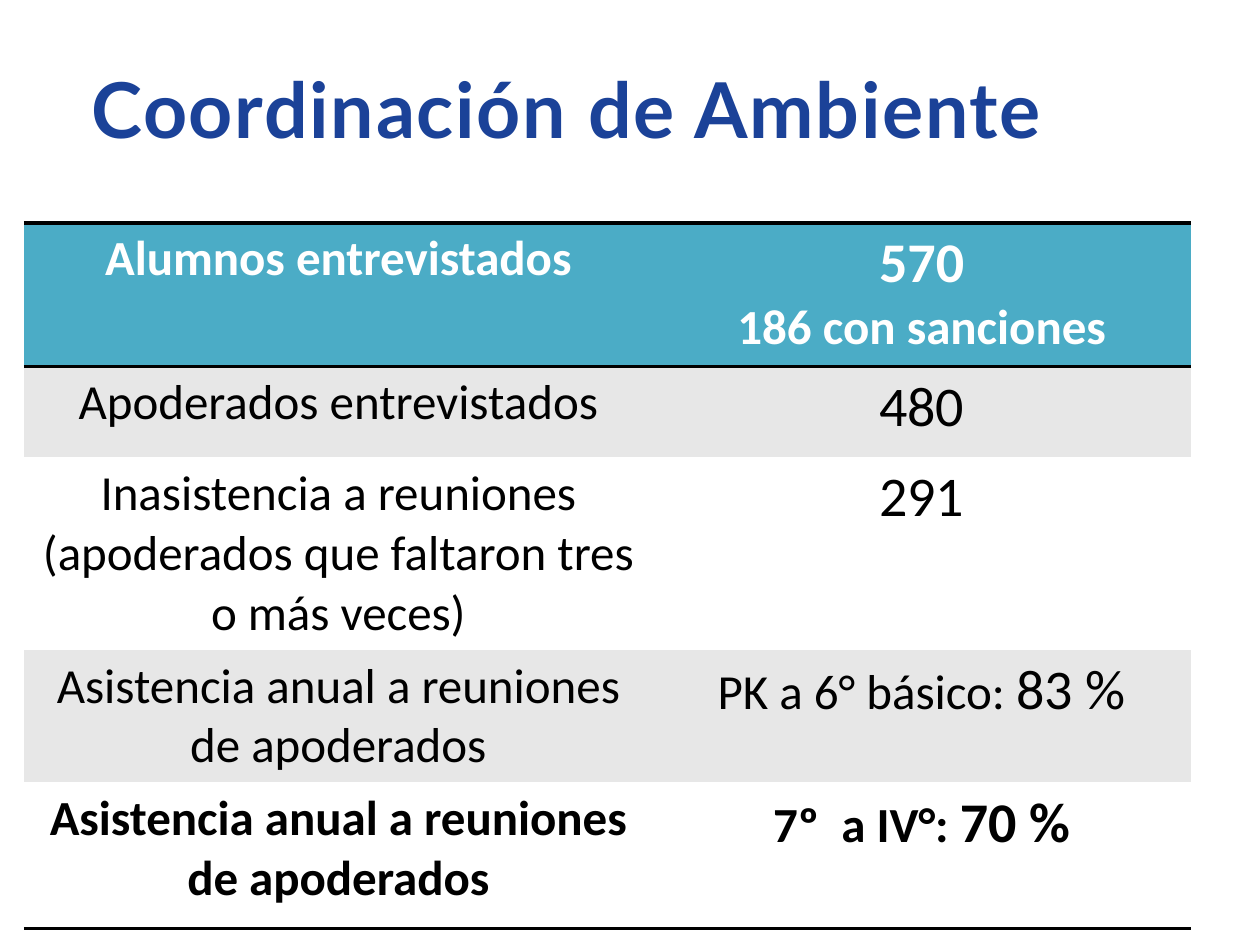
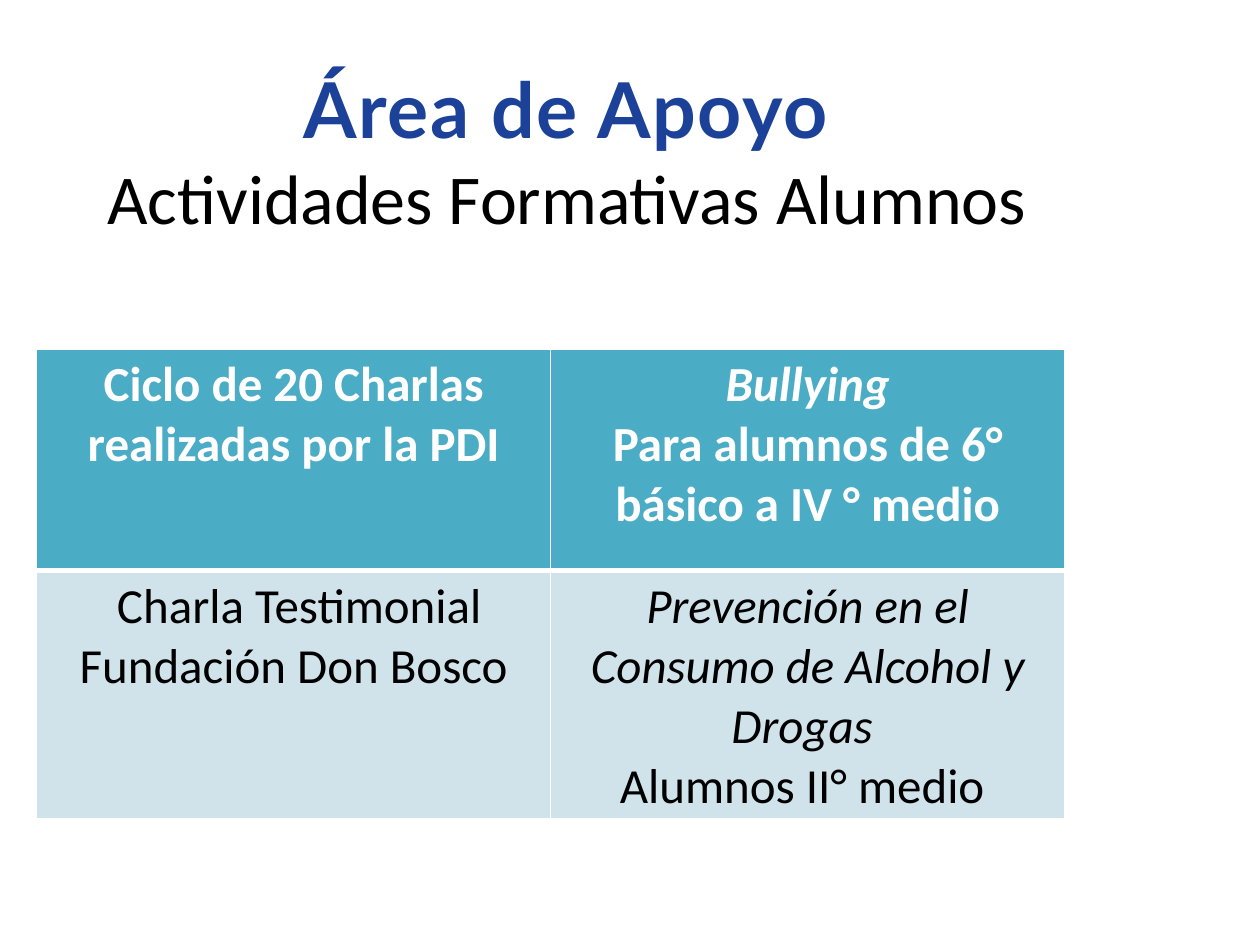
"""Build two slides of school results, each with a title and a two-column table."""
from lxml.etree import SubElement
from pptx import Presentation
from pptx.dml.color import RGBColor
from pptx.enum.text import MSO_ANCHOR, PP_ALIGN
from pptx.oxml.ns import qn
from pptx.util import Inches, Pt

COLORS = {"title": "1B4298", "head": "4BACC6", "black": "000000",
          "white": "FFFFFF", "grey": "E7E7E7", "pale": "D0E3EA"}
BODY, BIG = 28, 32


def add_run(p, text, size, color, bold=False, italic=False, name="Calibri"):
    r = p.add_run()
    r.text = text
    r.font.name, r.font.size = name, Pt(size)
    r.font.bold, r.font.italic = bold, italic
    r.font.color.rgb = RGBColor.from_string(COLORS[color])
    return r


def set_border(cell, side, color, width):
    ln = SubElement(cell._tc.get_or_add_tcPr(), qn(f"a:ln{side}"), w=str(Pt(width)))
    if width:
        fill = SubElement(ln, qn("a:solidFill"))
        SubElement(fill, qn("a:srgbClr"), val=COLORS[color])
    else:
        SubElement(ln, qn("a:noFill"))


attendance = "Asistencia anual a reuniones de apoderados"
slides = [
    {
        "title": "Coordinación de Ambiente", "subtitle": None,
        "at": (0.19, 1.77), "cols": (4.99, 4.27),
        "heights": (1.14, 0.72, 1.53, 1.05, 1.16),
        "fills": ("head", "grey", "white", "grey", "white"),
        "bold": (0, 4), "line": "black", "rules": (2, 2, 0, 0, 0, 2), "sides": 0,
        "rows": [
            ([[("Alumnos entrevistados", BODY, False)]],
             [[("570", BIG, False)], [("186 con sanciones", BODY, False)]]),
            ([[("Apoderados entrevistados", BODY, False)]],
             [[("480", BIG, False)]]),
            ([[("Inasistencia a reuniones", BODY, False)],
              [("(apoderados que faltaron tres o más veces)", BODY, False)]],
             [[("291", BIG, False)]]),
            ([[(attendance, BODY, False)]],
             [[("PK a 6° básico: ", BODY, False), ("83 %", BIG, False)]]),
            ([[(attendance, BODY, False)]],
             [[("7º  a IV°: ", BODY, False), ("70 %", BIG, False)]]),
        ],
    },
    {
        "title": "Área de Apoyo", "subtitle": "Actividades Formativas Alumnos",
        "at": (0.29, 2.77), "cols": (4.08, 4.08), "heights": (1.76, 1.97),
        "fills": ("head", "pale"),
        "bold": (0,), "line": "white", "rules": (1, 3, 1), "sides": 1,
        "rows": [
            ([[("Ciclo de 20 Charlas realizadas por la PDI", BODY, False)]],
             [[("Bullying", BODY, True)],
              [("Para alumnos de 6° básico a IV ° medio", BODY, False)]]),
            ([[(" Charla Testimonial", BODY, False)],
              [("Fundación Don Bosco", BODY, False)]],
             [[("Prevención en el Consumo de Alcohol y Drogas ", BODY, True)],
              [("Alumnos II° medio ", BODY, False)]]),
        ],
    },
]

prs = Presentation()
prs.slide_width, prs.slide_height = Inches(10), Inches(7.5)
W, H = prs.slide_width, prs.slide_height

for data in slides:
    s = prs.slides.add_slide(prs.slide_layouts[6])
    tf = s.shapes.add_textbox(0, int(H * 0.059), int(W * 0.9), int(H / 6)).text_frame
    tf.word_wrap = True
    tf.vertical_anchor = MSO_ANCHOR.TOP
    p = tf.paragraphs[0]
    p.alignment = PP_ALIGN.CENTER
    r = add_run(p, data["title"], 44, "title", bold=True, name="Lato")
    r._r.get_or_add_rPr().set("spc", "100")
    if data["subtitle"]:
        p.add_line_break()
        add_run(p, data["subtitle"], 40, "black")

    left, top = data["at"]
    cols, heights = data["cols"], data["heights"]
    table = s.shapes.add_table(len(heights), len(cols), Inches(left), Inches(top),
                               Inches(sum(cols)), Inches(sum(heights))).table
    table.horz_banding = False
    for column, width in zip(table.columns, cols):
        column.width = Inches(width)
    for i, (row, height) in enumerate(zip(table.rows, heights)):
        row.height = Inches(height)
        widths = {"L": data["sides"], "R": data["sides"],
                  "T": data["rules"][i], "B": data["rules"][i + 1]}
        for cell, paragraphs in zip(row.cells, data["rows"][i]):
            for side, width in widths.items():
                set_border(cell, side, data["line"], width)
            cell.fill.solid()
            cell.fill.fore_color.rgb = RGBColor.from_string(COLORS[data["fills"][i]])
            tf = cell.text_frame
            for k, runs in enumerate(paragraphs):
                p = tf.add_paragraph() if k else tf.paragraphs[0]
                p.alignment = PP_ALIGN.CENTER
                for text, size, italic in runs:
                    add_run(p, text, size, "black" if i else "white",
                            i in data["bold"], italic)

prs.save("out.pptx")
